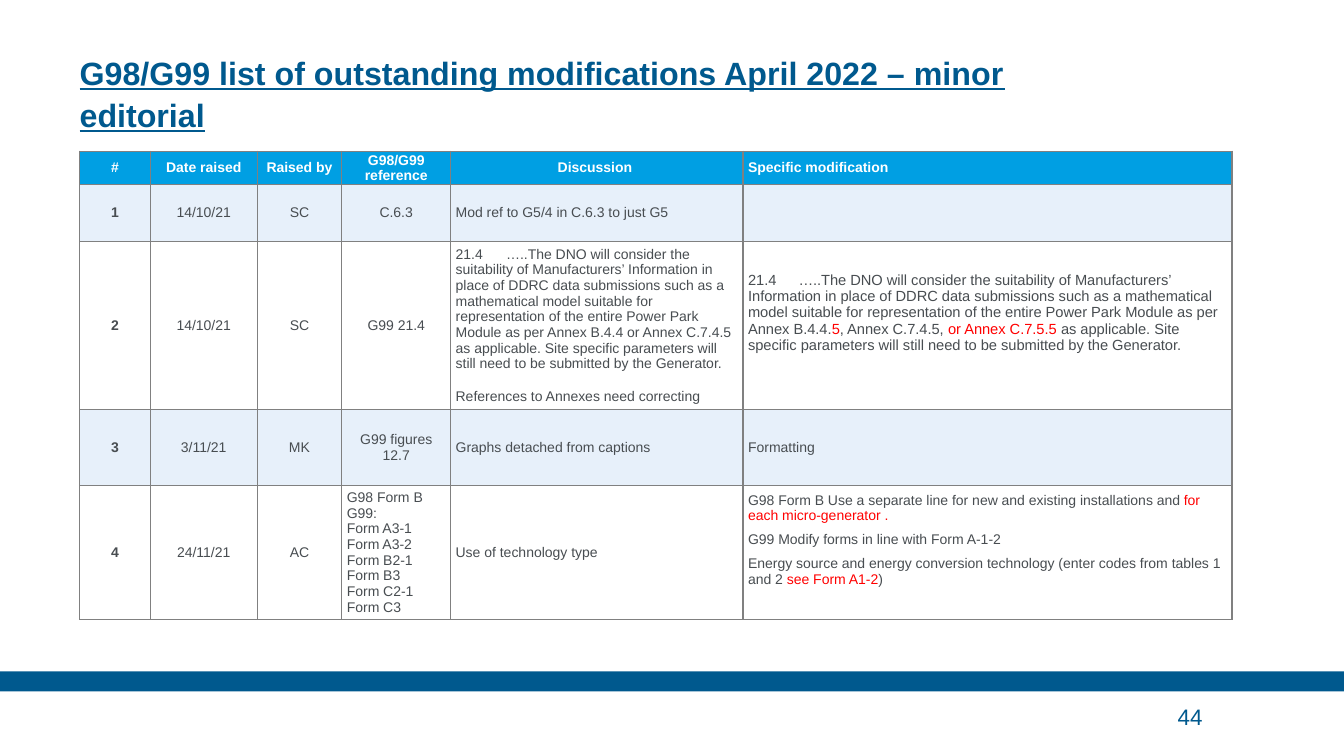
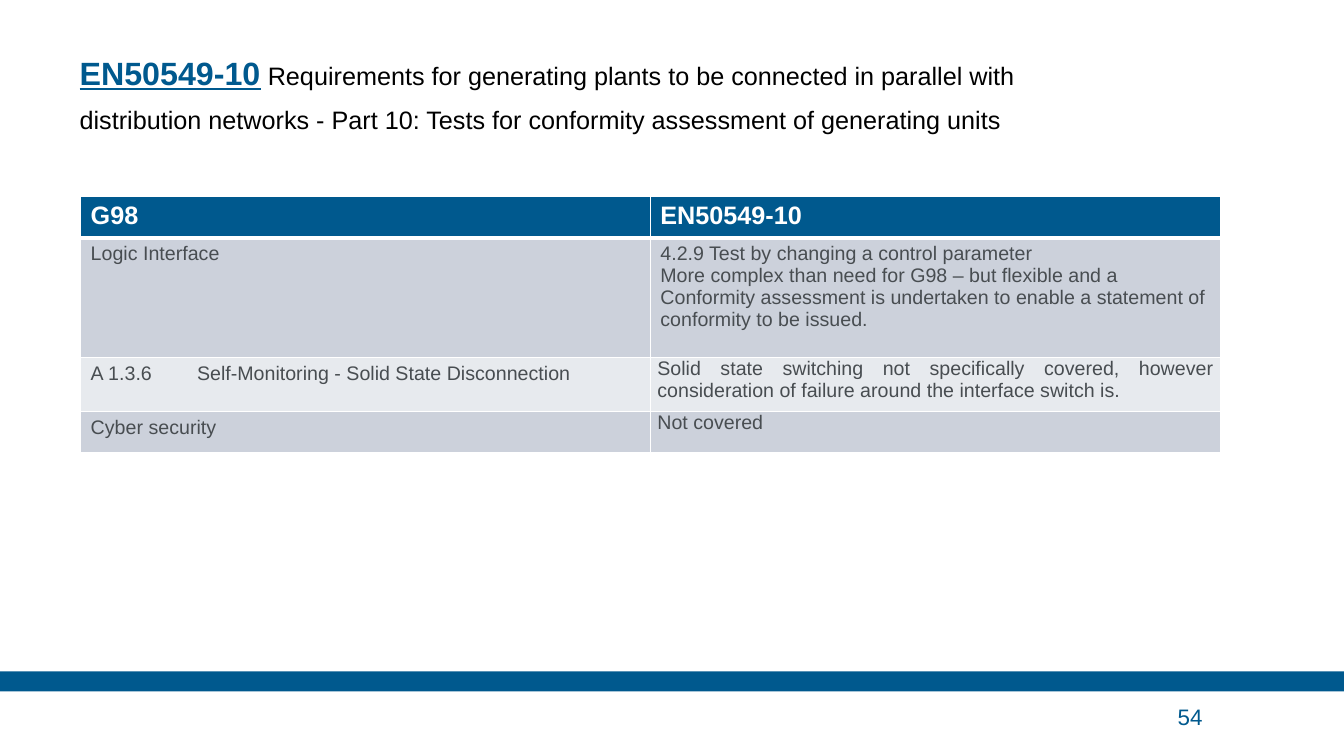
"""Build two slides: outstanding modifications and a comparison with EN50549-10."""
from dataclasses import dataclass

from lxml.etree import SubElement
from pptx import Presentation
from pptx.dml.color import RGBColor
from pptx.enum.shapes import MSO_SHAPE
from pptx.enum.text import MSO_ANCHOR, PP_ALIGN
from pptx.oxml.ns import qn
from pptx.util import Inches, Pt

FONT = "Arial"
NAVY = "00598E"
SKY = "009FE3"
PALE = "E7F0FA"
TEXT = "484D51"
RED = "FF0000"
GREY = "808080"
WHITE = "FFFFFF"
BLACK = "000000"
SILVER = "CCD1DB"
LIGHT = "E7EAEE"
LEFT, CENTER, JUSTIFY = PP_ALIGN.LEFT, PP_ALIGN.CENTER, PP_ALIGN.JUSTIFY
SLIDE_WIDTH = 13.33


@dataclass(frozen=True)
class Span:
    text: str
    color: str = TEXT
    size: float = 10
    bold: bool = False
    underline: bool = False


@dataclass(frozen=True)
class Cell:
    paragraphs: tuple[tuple[Span, ...], ...]
    fill: str
    align: PP_ALIGN = LEFT
    anchor: MSO_ANCHOR = MSO_ANCHOR.MIDDLE
    margins: tuple[float, float, float, float] = (0.05, 0, 0.05, 0)
    gap: float = 0


@dataclass(frozen=True)
class Grid:
    left: float
    top: float
    columns: tuple[float, ...]
    rows: tuple[float, ...]
    cells: tuple[tuple[Cell, ...], ...]
    border: str
    header_rule: float = 1


def rgb(color: str) -> RGBColor:
    return RGBColor.from_string(color)


def add_spans(para, spans) -> None:
    for span in spans:
        run = para.add_run()
        run.text = span.text
        run.font.name = FONT
        run.font.size = Pt(span.size)
        run.font.bold = span.bold
        run.font.underline = span.underline
        run.font.color.rgb = rgb(span.color)


def add_text(page, left: float, top: float, width: float, height: float,
             anchor: MSO_ANCHOR, spans, line_spacing: float | None = None) -> None:
    box = page.shapes.add_textbox(Inches(left), Inches(top), Inches(width), Inches(height))
    frame = box.text_frame
    frame.word_wrap = True
    frame.vertical_anchor = anchor
    frame.margin_left = frame.margin_top = frame.margin_right = frame.margin_bottom = 0
    para = frame.paragraphs[0]
    if line_spacing:
        para.line_spacing = Pt(line_spacing)
    add_spans(para, spans)


def add_page(deck, title, number: int):
    page = deck.slides.add_slide(deck.slide_layouts[6])
    band = page.shapes.add_shape(MSO_SHAPE.RECTANGLE, 0, Inches(6.66),
                                 Inches(SLIDE_WIDTH), Inches(0.2))
    band.shadow.inherit = False
    band.fill.solid()
    band.fill.fore_color.rgb = rgb(NAVY)
    band.line.fill.background()
    add_text(page, 0.79, 0.31, 9.84, 1.02, MSO_ANCHOR.BOTTOM, title, 30)
    add_text(page, 11.68, 6.91, 1.23, 0.39, MSO_ANCHOR.MIDDLE, [Span(str(number), NAVY, 16)])
    return page


def set_border(target, side: str, color: str, width: float) -> None:
    properties = target._tc.get_or_add_tcPr()
    line = SubElement(properties, qn(f"a:ln{side}"), w=str(Pt(width)))
    fill = SubElement(line, qn("a:solidFill"))
    SubElement(fill, qn("a:srgbClr"), val=color)


def fill_cell(target, cell: Cell) -> None:
    target.fill.solid()
    target.fill.fore_color.rgb = rgb(cell.fill)
    target.vertical_anchor = cell.anchor
    margins = [Inches(margin) for margin in cell.margins]
    target.margin_left, target.margin_top, target.margin_right, target.margin_bottom = margins
    frame = target.text_frame
    for index, spans in enumerate(cell.paragraphs):
        para = frame.add_paragraph() if index else frame.paragraphs[0]
        para.alignment = cell.align
        if index:
            para.space_before = Pt(cell.gap)
        add_spans(para, spans)


def add_grid(page, grid: Grid) -> None:
    frame = page.shapes.add_table(
        len(grid.rows), len(grid.columns), Inches(grid.left), Inches(grid.top),
        Inches(sum(grid.columns)), Inches(sum(grid.rows)))
    table = frame.table
    table.horz_banding = False
    for column, width in zip(table.columns, grid.columns):
        column.width = Inches(width)
    for row, height in zip(table.rows, grid.rows):
        row.height = Inches(height)
    for row_index, cells in enumerate(grid.cells):
        rules = {"L": 1, "R": 1,
                 "T": grid.header_rule if row_index == 1 else 1,
                 "B": grid.header_rule if row_index == 0 else 1}
        for column_index, cell in enumerate(cells):
            target = table.cell(row_index, column_index)
            for side, width in rules.items():
                set_border(target, side, grid.border, width)
            fill_cell(target, cell)


def modification_row(fill: str, number: str, date: str, person: str,
                     reference: tuple[str, ...], discussion: tuple[str, ...],
                     modification, bottom: float = 0) -> tuple[Cell, ...]:
    def plain(*texts: str):
        return tuple((Span(text),) for text in texts)

    return (
        Cell(((Span(number, bold=True),),), fill, CENTER),
        Cell(plain(date), fill, CENTER),
        Cell(plain(person), fill, CENTER),
        Cell(plain(*reference), fill, CENTER if len(reference) == 1 else LEFT),
        Cell(plain(*discussion), fill, gap=12),
        Cell(modification, fill, margins=(0.05, 0, 0.05, bottom), gap=6),
    )


def modifications_grid() -> Grid:
    headings = ("#", "Date raised", "Raised by", "G98/G99 reference",
                "Discussion ", "Specific modification")
    header = tuple(
        Cell(((Span(text, WHITE, bold=True),),), SKY, LEFT if text == headings[-1] else CENTER)
        for text in headings)
    clause = (
        "21.4\t…..The DNO will consider the suitability of Manufacturers’ Information in "
        "place of DDRC data submissions such as a mathematical model suitable for "
        "representation of the entire Power Park Module as per Annex B.4.4")
    ending = ("as applicable. Site specific parameters will still need to be "
              "submitted by the Generator.")
    revised = tuple(Span(text, color, 10.5) for text, color in (
        (f"{clause}.", TEXT), ("5", RED), (", Annex C.7.4.5, ", TEXT),
        ("or Annex C.7.5.5 ", RED), (ending, TEXT)))
    forms = (
        (Span("G98 Form B Use a separate line for new and existing installations and "),
         Span("for each micro-generator .", RED)),
        (Span("G99 Modify forms in line with Form A-1-2"),),
        (Span("Energy source and energy conversion technology "
              "(enter codes from tables 1 and 2 "),
         Span("see Form A1-2", RED), Span(")")),
    )
    return Grid(
        0.79, 1.5, (0.7, 1.06, 0.84, 1.08, 2.9, 4.85), (0.33, 0.56, 1.57, 0.75, 1.24),
        (header,
         modification_row(PALE, "1", "14/10/21", "SC", ("C.6.3",),
                          ("Mod ref to G5/4 in C.6.3 to just G5",), ()),
         modification_row(WHITE, "2", "14/10/21", "SC", ("G99 21.4",),
                          (f"{clause} or Annex C.7.4.5 {ending}",
                           "References to Annexes need correcting"), (revised,), 0.25),
         modification_row(PALE, "3", "3/11/21", "MK", ("G99 figures 12.7",),
                          ("Graphs detached from captions",), ((Span("Formatting"),),)),
         modification_row(WHITE, "4", "24/11/21", "AC",
                          ("G98 Form B G99:", "Form A3-1 Form A3-2", "Form B2-1",
                           "Form B3", "Form C2-1", "Form C3"),
                          ("Use of technology type",), forms, 0.25)),
        GREY)


def comparison_cell(fill: str, *texts: str, header: bool = False, tight: bool = False) -> Cell:
    color, size = (WHITE, 18) if header else (TEXT, 14)
    return Cell(tuple((Span(text, color, size, header),) for text in texts), fill,
                JUSTIFY if tight else LEFT, MSO_ANCHOR.TOP,
                (0.07, 0, 0.07, 0) if tight else (0.1, 0.05, 0.1, 0.05))


def comparison_grid() -> Grid:
    return Grid(
        0.8, 1.95, (5.65, 5.66), (0.41, 1.19, 0.53, 0.41),
        ((comparison_cell(NAVY, "G98", header=True),
          comparison_cell(NAVY, "EN50549-10", header=True)),
         (comparison_cell(SILVER, "Logic Interface"),
          comparison_cell(
              SILVER, "4.2.9 Test by changing a control parameter",
              "More complex than need for G98 – but flexible and a Conformity assessment "
              "is undertaken to enable a statement of conformity to be issued.")),
         (comparison_cell(LIGHT, "A 1.3.6\t Self-Monitoring - Solid State Disconnection"),
          comparison_cell(
              LIGHT, "Solid state switching not specifically covered, however "
              "consideration of failure around the interface switch is.", tight=True)),
         (comparison_cell(SILVER, "Cyber security"),
          comparison_cell(SILVER, "Not covered", tight=True))),
        WHITE, 3)


def heading(text: str) -> Span:
    return Span(text, NAVY, 23, True, True)


def main() -> None:
    deck = Presentation()
    deck.slide_width = Inches(SLIDE_WIDTH)
    deck.slide_height = Inches(7.5)
    page = add_page(
        deck,
        [heading("G98/G99 list of outstanding modifications April 2022 – minor editorial")], 44)
    add_grid(page, modifications_grid())
    page = add_page(
        deck,
        [heading("EN50549-10"),
         Span(" Requirements for generating plants to be connected in parallel with "
              "distribution networks - Part 10: Tests for conformity assessment of "
              "generating units", BLACK, 18)], 54)
    add_grid(page, comparison_grid())
    deck.save("out.pptx")


if __name__ == "__main__":
    main()
